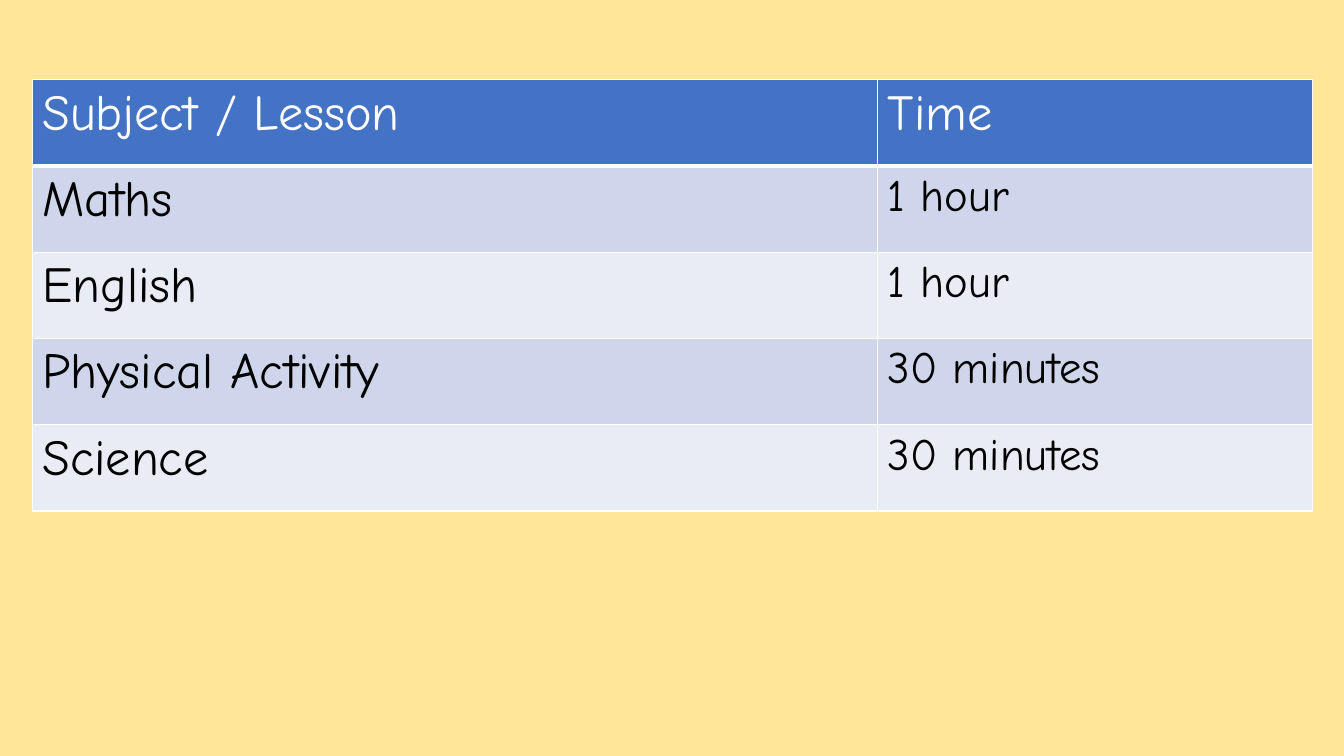
from dataclasses import dataclass

from lxml.etree import SubElement
from pptx import Presentation
from pptx.dml.color import RGBColor as Rgb
from pptx.oxml.ns import qn
from pptx.slide import Slide
from pptx.table import _Cell as Cell
from pptx.util import Pt


@dataclass(frozen=True)
class Theme:
    font: str = "Comic Neue"
    background: str = "FFE699"
    header: str = "4472C4"
    bands: tuple[str, str] = ("CFD5EA", "E9EBF5")
    light: str = "FFFFFF"
    dark: str = "000000"
    large: int = 36
    medium: int = 32
    rule: int = 1
    header_rule: int = 3


@dataclass(frozen=True)
class Lesson:
    subject: str
    time: str


THEME = Theme()
HEADING = Lesson("Subject / Lesson", "Time")
LESSONS = [
    Lesson("Maths", "1 hour"),
    Lesson("English", "1 hour"),
    Lesson("Physical Activity", "30 minutes"),
    Lesson("Science", "30 minutes"),
]
LEFT, TOP = 23, 56.9
COLUMN_WIDTHS = (604.1, 310.3)
ROW_HEIGHT = 61.65


def draw_borders(cell: Cell, bottom: int) -> None:
    properties = cell._tc.get_or_add_tcPr()
    widths = {"L": THEME.rule, "R": THEME.rule, "T": THEME.rule, "B": bottom}
    for side, width in widths.items():
        border = SubElement(properties, qn(f"a:ln{side}"), w=str(Pt(width)))
        fill = SubElement(border, qn("a:solidFill"))
        SubElement(fill, qn("a:srgbClr"), val=THEME.light)


def fill_cell(cell: Cell, text: str, size: int, ink: str, fill: str, bottom: int) -> None:
    draw_borders(cell, bottom)
    cell.fill.solid()
    cell.fill.fore_color.rgb = Rgb.from_string(fill)
    cell.text_frame.text = text
    font = cell.text_frame.paragraphs[0].runs[0].font
    font.name = THEME.font
    font.size = Pt(size)
    font.bold = False
    font.color.rgb = Rgb.from_string(ink)


def draw_timetable(slide: Slide) -> None:
    entries = [HEADING, *LESSONS]
    timetable = slide.shapes.add_table(
        len(entries), len(COLUMN_WIDTHS), Pt(LEFT), Pt(TOP),
        Pt(sum(COLUMN_WIDTHS)), Pt(ROW_HEIGHT * len(entries)),
    ).table
    for column, width in zip(timetable.columns, COLUMN_WIDTHS):
        column.width = Pt(width)
    for index, entry in enumerate(entries):
        timetable.rows[index].height = Pt(ROW_HEIGHT)
        is_heading = index == 0
        ink = THEME.light if is_heading else THEME.dark
        fill = THEME.header if is_heading else THEME.bands[(index - 1) % 2]
        bottom = THEME.header_rule if is_heading else THEME.rule
        time_size = THEME.large if is_heading else THEME.medium
        fill_cell(timetable.cell(index, 0), entry.subject, THEME.large, ink, fill, bottom)
        fill_cell(timetable.cell(index, 1), entry.time, time_size, ink, fill, bottom)


def main() -> None:
    presentation = Presentation()
    presentation.slide_width = Pt(960)
    presentation.slide_height = Pt(540)
    slide = presentation.slides.add_slide(presentation.slide_layouts[6])
    slide.background.fill.solid()
    slide.background.fill.fore_color.rgb = Rgb.from_string(THEME.background)
    draw_timetable(slide)
    presentation.save("out.pptx")


if __name__ == "__main__":
    main()
